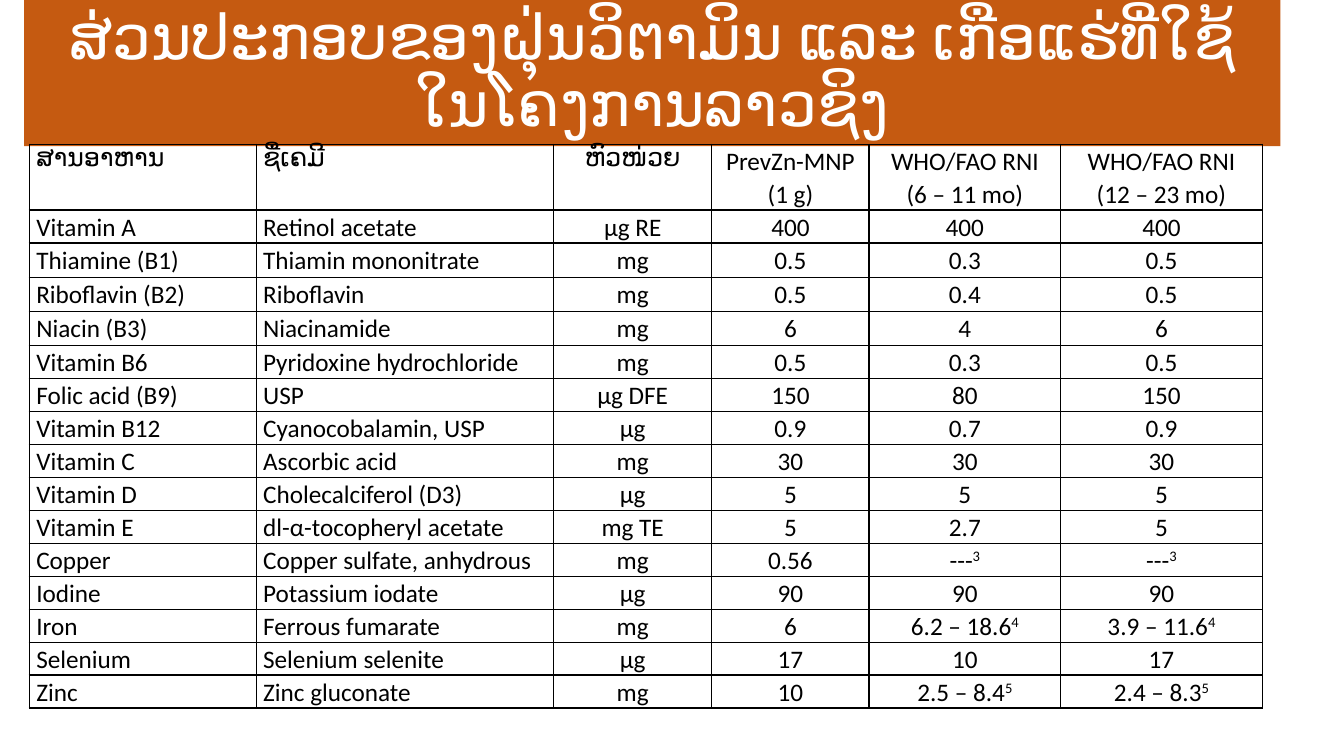
import pptx
import pptx.dml.color
import pptx.enum.shapes
import pptx.enum.text
import pptx.oxml
import pptx.oxml.ns
import pptx.util

TITLE = "ສ່ວນປະກອບຂອງຝຸ່ນວິຕາມິນ ແລະ ເກືອແຮ່ທີ່ໃຊ້ໃນໂຄງການລາວຊິງ"
HEADINGS = ("ສານອາຫານ", "ຊື່ເຄມີ", "ຫົວໜ່ວຍ", "PrevZn-MNP (1 g)",
            "WHO/FAO RNI\n(6 – 11 mo)", "WHO/FAO RNI\n(12 – 23 mo)")
NUTRIENTS = [
    ("Vitamin A", "Retinol acetate", "µg RE", "400", "400", "400"),
    ("Thiamine (B1)", "Thiamin mononitrate", "mg", "0.5", "0.3", "0.5"),
    ("Riboflavin (B2)", "Riboflavin", "mg", "0.5", "0.4", "0.5"),
    ("Niacin (B3)", "Niacinamide", "mg", "6", "4", "6"),
    ("Vitamin B6", "Pyridoxine hydrochloride", "mg", "0.5", "0.3", "0.5"),
    ("Folic acid (B9)", "USP", "µg DFE", "150", "80", "150"),
    ("Vitamin B12", "Cyanocobalamin, USP", "µg", "0.9", "0.7", "0.9"),
    ("Vitamin C", "Ascorbic acid", "mg", "30", "30", "30"),
    ("Vitamin D", "Cholecalciferol (D3)", "µg", "5", "5", "5"),
    ("Vitamin E", "dl-α-tocopheryl acetate", "mg TE", "5", "2.7", "5"),
    ("Copper", "Copper sulfate, anhydrous", "mg", "0.56", "---^3", "---^3"),
    ("Iodine", "Potassium iodate", "µg", "90", "90", "90"),
    ("Iron", "Ferrous fumarate", "mg", "6", "6.2 – 18.6^4", "3.9 – 11.6^4"),
    ("Selenium", "Selenium selenite", "µg", "17", "10", "17"),
    ("Zinc", "Zinc gluconate", "mg", "10", "2.5 – 8.4^5", "2.4 – 8.3^5"),
]
COLUMN_WIDTHS = (2.25, 2.95, 1.57, 1.56, 1.9, 2)
ROW_HEIGHTS = [0.58, 0.28] + [0.34] * 3 + [0.32] * 11
LEFT_ALIGNED_COLUMNS = 2
ORANGE, WHITE, BLACK = "C55A11", "FFFFFF", "000000"

inch = pptx.util.Inches
ALIGN = pptx.enum.text.PP_ALIGN
ANCHOR = pptx.enum.text.MSO_ANCHOR


def color(value):
    return pptx.dml.color.RGBColor.from_string(value)


def write(frame, text, size, font, ink, align, spacing):
    for index, line in enumerate(text.split("\n")):
        paragraph = frame.add_paragraph() if index else frame.paragraphs[0]
        paragraph.alignment = align
        paragraph.line_spacing = spacing
        body, _, note = line.partition("^")
        for words, baseline in ((body, None), (note, "30000")):
            if not words:
                continue
            run = paragraph.add_run()
            run.text = words
            run.font.size = pptx.util.Pt(size)
            run.font.name = font
            run.font.color.rgb = color(ink)
            if baseline:
                run.font._element.set("baseline", baseline)


def outline(cell, ink):
    for index, side in enumerate(("lnL", "lnR", "lnT", "lnB")):
        border = pptx.oxml.parse_xml(
            f'<a:{side} {pptx.oxml.ns.nsdecls("a")} w="{pptx.util.Pt(1)}">'
            f'<a:solidFill><a:srgbClr val="{ink}"/></a:solidFill></a:{side}>')
        cell._tc.get_or_add_tcPr().insert(index, border)


deck = pptx.Presentation()
deck.slide_width, deck.slide_height = inch(13.33), inch(7.5)
slide = deck.slides.add_slide(deck.slide_layouts[6])

banner = slide.shapes.add_shape(pptx.enum.shapes.MSO_SHAPE.RECTANGLE,
                                inch(0.24), 0, inch(12.46), inch(1.45))
banner.shadow.inherit = False
banner.fill.solid()
banner.fill.fore_color.rgb = color(ORANGE)
banner.line.fill.background()
banner.text_frame.word_wrap = True
banner.text_frame.vertical_anchor = ANCHOR.MIDDLE
write(banner.text_frame, TITLE, size=44, font="Lato", ink=WHITE,
      align=ALIGN.CENTER, spacing=0.9)

rows = [HEADINGS] + NUTRIENTS
composition = slide.shapes.add_table(
    len(rows), len(HEADINGS), inch(0.29), inch(1.43),
    inch(sum(COLUMN_WIDTHS)), inch(sum(ROW_HEIGHTS))).table
composition.first_row = composition.horz_banding = False
for column, width in zip(composition.columns, COLUMN_WIDTHS):
    column.width = inch(width)
for row, height, values in zip(composition.rows, ROW_HEIGHTS, rows):
    row.height = inch(height)
    for position, (cell, value) in enumerate(zip(row.cells, values)):
        cell.margin_left = cell.margin_right = inch(0.07)
        cell.margin_top = cell.margin_bottom = 0
        cell.vertical_anchor = ANCHOR.TOP
        cell.fill.background()
        outline(cell, BLACK)
        align = ALIGN.LEFT if position < LEFT_ALIGNED_COLUMNS else ALIGN.CENTER
        write(cell.text_frame, value, size=18, font="Calibri", ink=BLACK,
              align=align, spacing=1.07)

deck.save("out.pptx")
